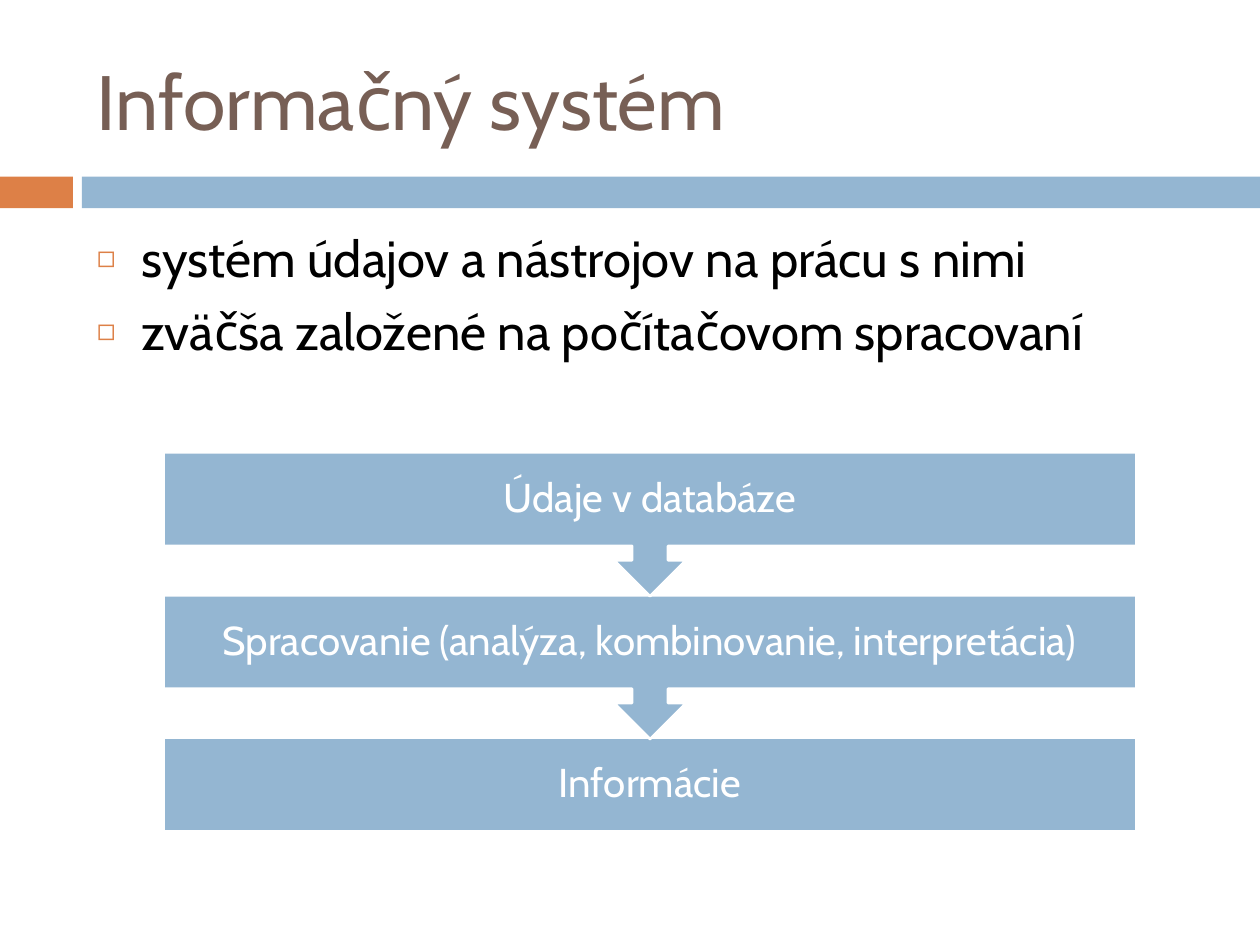
import dataclasses

import lxml.etree
import pptx
import pptx.dml.color
import pptx.enum.shapes
import pptx.enum.text
import pptx.oxml.ns
import pptx.util

Cm, Pt = pptx.util.Cm, pptx.util.Pt
KIND = pptx.enum.shapes.MSO_SHAPE
ALIGN = pptx.enum.text.PP_ALIGN
MIDDLE = pptx.enum.text.MSO_ANCHOR.MIDDLE
TOP = pptx.enum.text.MSO_ANCHOR.TOP
BLUE, ORANGE, BROWN = "94B6D2", "DD8047", "775F55"
WHITE, BLACK = "FFFFFF", "000000"
FONT = "Cabin"


@dataclasses.dataclass
class Box:
    left: float
    top: float
    width: float
    height: float
    fill: str = BLUE
    kind: int = KIND.RECTANGLE
    line: str = ""
    text: str = ""


def color(code: str):
    return pptx.dml.color.RGBColor.from_string(code)


def apply(item, values: dict) -> None:
    for name, value in values.items():
        setattr(item, name, value)


def write(shape, lines: list, size: int, ink: str, anchor, style: dict) -> None:
    frame = shape.text_frame
    frame.text = "\n".join(lines)
    apply(frame, {"word_wrap": True, "vertical_anchor": anchor,
                  "auto_size": pptx.enum.text.MSO_AUTO_SIZE.NONE})
    for para in frame.paragraphs:
        apply(para, style)
        for run in para.runs:
            apply(run.font, {"name": FONT, "size": Pt(size)})
            run.font.color.rgb = color(ink)


def draw(slide, box: Box) -> None:
    shape = slide.shapes.add_shape(
        box.kind, Cm(box.left), Cm(box.top), Cm(box.width), Cm(box.height))
    shape.shadow.inherit = False
    shape.fill.solid()
    shape.fill.fore_color.rgb = color(box.fill)
    if box.line:
        shape.line.color.rgb = color(box.line)
        shape.line.width = Pt(1.5)
    else:
        shape.line.fill.background()
    if box.text:
        write(shape, [box.text], 23, WHITE, MIDDLE,
              {"alignment": ALIGN.CENTER, "line_spacing": 0.9})
        sides = ("left", "top", "right", "bottom")
        apply(shape.text_frame, {f"margin_{side}": Cm(0.46) for side in sides})


def place(shape, left: float, top: float, width: float, height: float) -> None:
    apply(shape, {"left": Cm(left), "top": Cm(top),
                  "width": Cm(width), "height": Cm(height)})


def bullet(para) -> None:
    qn = pptx.oxml.ns.qn
    props = para._p.get_or_add_pPr()
    props.set("marL", str(Cm(0.89)))
    props.set("indent", str(-Cm(0.89)))
    tint = lxml.etree.SubElement(props, qn("a:buClr"))
    lxml.etree.SubElement(tint, qn("a:srgbClr"), val=ORANGE)
    lxml.etree.SubElement(props, qn("a:buSzPct"), val="60000")
    lxml.etree.SubElement(props, qn("a:buChar"), char="◻")


def main() -> None:
    deck = pptx.Presentation()
    apply(deck, {"slide_width": Cm(25.4), "slide_height": Cm(19.05)})
    slide = deck.slides.add_slide(deck.slide_layouts[1])

    # Band under the title
    draw(slide, Box(0, 3.56, 1.47, 0.64, ORANGE))
    draw(slide, Box(1.65, 3.56, 23.75, 0.64))

    # Title and list
    title, body = slide.placeholders
    place(title, 1.7, 0.64, 22.66, 2.74)
    write(title, ["Informačný systém"], 44, BROWN, MIDDLE,
          {"alignment": ALIGN.LEFT})
    place(body, 1.7, 4.45, 22.66, 12.5)
    write(body, ["systém údajov a nástrojov na prácu s nimi",
                 "zväčša založené na počítačovom spracovaní"],
          29, BLACK, TOP, {"space_before": Pt(7)})
    for para in body.text_frame.paragraphs:
        bullet(para)

    # Process steps, last one at the back so the arrows lie over the next box
    steps = ["Údaje v databáze",
             "Spracovanie (analýza, kombinovanie, interpretácia)",
             "Informácie"]
    last = len(steps) - 1
    for row in range(last, -1, -1):
        kind, high = ((KIND.RECTANGLE, 1.88) if row == last
                      else (KIND.DOWN_ARROW_CALLOUT, 2.9))
        draw(slide, Box(3.3, 9.12 + row * 2.88, 19.61, high,
                        kind=kind, line=WHITE, text=steps[row]))

    deck.save("out.pptx")


if __name__ == "__main__":
    main()
